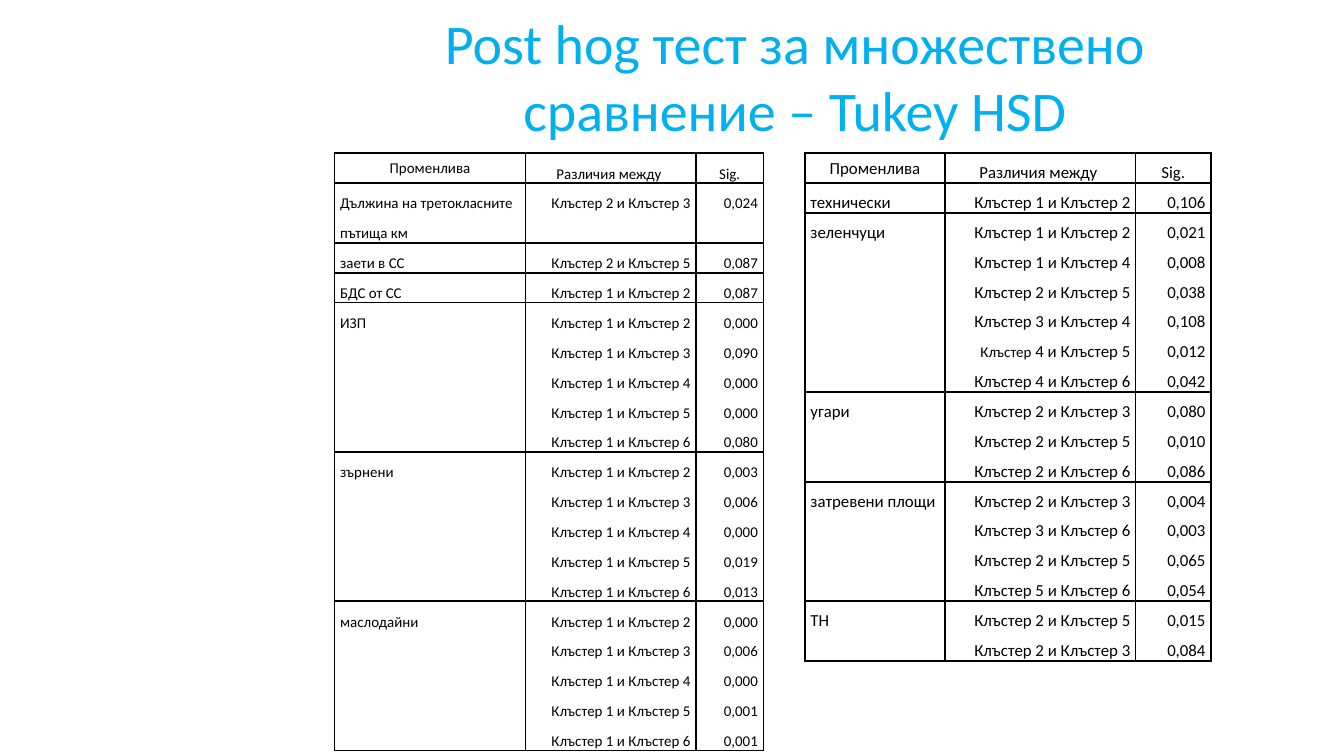
from dataclasses import dataclass

from lxml.etree import SubElement
from pptx import Presentation
from pptx.dml.color import RGBColor
from pptx.enum.text import MSO_ANCHOR, MSO_AUTO_SIZE, PP_ALIGN
from pptx.oxml.ns import qn
from pptx.util import Inches, Pt

FONT = "Calibri"
BLACK = RGBColor(0x00, 0x00, 0x00)
WHITE = RGBColor(0xFF, 0xFF, 0xFF)
TITLE_BLUE = RGBColor(0x00, 0xB0, 0xF0)
SLIDE_WIDTH = Inches(10)
LINE_PITCH = Pt(16)
TABLE_TOP = Inches(1.14)
HEADERS = ("Променлива", "Различия между ", "Sig.")


@dataclass
class Variable:
    name: str
    pairs: str  # compared clusters; a comma starts a new paragraph
    significance: str

    def columns(self) -> list[list[str]]:
        """Paragraphs of text for each of the three cells."""
        comparisons = [
            " ".join("Клъстер {} и Клъстер {}".format(*pair.split("-"))
                     for pair in group.split())
            for group in self.pairs.split(",")
        ]
        return [self.name.split("\n"), comparisons, self.significance.split()]

    def line_count(self) -> int:
        return max(len(self.name.split("\n")), len(self.significance.split()))


@dataclass
class Comparison:
    left: float
    widths: tuple[float, ...]
    font_size: int
    variables: list[Variable]


LEFT_TABLE = Comparison(2.49, (1.42, 1.27, 0.5), 8, [
    Variable("Дължина на третокласните\nпътища км", "2-3", "0,024"),
    Variable("заети в СС", "2-5", "0,087"),
    Variable("БДС от СС", "1-2", "0,087"),
    Variable("ИЗП", "1-2 1-3 1-4 1-5 1-6", "0,000 0,090 0,000 0,000 0,080"),
    Variable("зърнени", "1-2 1-3 1-4 1-5 1-6", "0,003 0,006 0,000 0,019 0,013"),
    Variable("маслодайни", "1-2 1-3 1-4 1-5 1-6", "0,000 0,006 0,000 0,001 0,001"),
])
RIGHT_TABLE = Comparison(5.99, (1.04, 1.42, 0.56), 9, [
    Variable("технически", "1-2", "0,106"),
    Variable("зеленчуци", "1-2 1-4,2-5,3-4,4-5,4-6",
             "0,021 0,008 0,038 0,108 0,012 0,042"),
    Variable("угари", "2-3,2-5 2-6", "0,080 0,010 0,086"),
    Variable("затревени площи", "2-3,3-6,2-5,5-6", "0,004 0,003 0,065 0,054"),
    Variable("ТН", "2-5,2-3", "0,015 0,084"),
])


def add_borders(cell) -> None:
    properties = cell._tc.get_or_add_tcPr()
    for index, side in enumerate(("lnL", "lnR", "lnT", "lnB")):
        line = SubElement(properties, qn(f"a:{side}"), w=str(Pt(1)))
        fill = SubElement(line, qn("a:solidFill"))
        SubElement(fill, qn("a:srgbClr"), val=str(BLACK))
        properties.insert(index, line)  # borders come before the fill


def fill_cell(cell, lines: list[str], size: int, alignment: PP_ALIGN,
              anchor: MSO_ANCHOR = MSO_ANCHOR.TOP, indented: bool = True) -> None:
    cell.margin_left = cell.margin_right = cell.margin_top = cell.margin_bottom = 0
    cell.vertical_anchor = anchor
    cell.fill.solid()
    cell.fill.fore_color.rgb = WHITE
    add_borders(cell)
    cell.text_frame.text = "\n".join(lines)
    for paragraph in cell.text_frame.paragraphs:
        paragraph.alignment = alignment
        paragraph.line_spacing = LINE_PITCH if indented else 1.07
        if indented:
            properties = paragraph._p.get_or_add_pPr()
            for side in ("marL", "marR"):
                properties.set(side, str(Inches(0.04)))
        paragraph.font.name = FONT
        paragraph.font.size = Pt(size)
        paragraph.font.color.rgb = BLACK


def add_comparison(slide, comparison: Comparison):
    variables = comparison.variables
    line_counts = [1] + [variable.line_count() for variable in variables]
    shape = slide.shapes.add_table(
        len(line_counts), len(HEADERS), Inches(comparison.left), TABLE_TOP,
        Inches(sum(comparison.widths)), LINE_PITCH * sum(line_counts))
    table = shape.table
    table.first_row = table.horz_banding = False
    for column, width in zip(table.columns, comparison.widths):
        column.width = Inches(width)
    for row, count in zip(table.rows, line_counts):
        row.height = LINE_PITCH * count

    # Header row
    for index, header in enumerate(HEADERS):
        anchor = MSO_ANCHOR.BOTTOM if index else MSO_ANCHOR.MIDDLE
        fill_cell(table.cell(0, index), [header], comparison.font_size,
                  PP_ALIGN.CENTER, anchor, indented=index > 0)

    # One row per variable
    for row_index, variable in enumerate(variables, start=1):
        for index, lines in enumerate(variable.columns()):
            alignment = PP_ALIGN.RIGHT if index else PP_ALIGN.LEFT
            fill_cell(table.cell(row_index, index), lines,
                      comparison.font_size, alignment)
    return table


def add_title(slide, text: str) -> None:
    title = slide.shapes.title
    title.left, title.top = Inches(2.49), Inches(0.14)
    title.width, title.height = Inches(6.85), Inches(0.84)
    frame = title.text_frame
    frame.text = text
    frame.word_wrap = True
    frame.auto_size = MSO_AUTO_SIZE.NONE
    frame.vertical_anchor = MSO_ANCHOR.MIDDLE
    paragraph = frame.paragraphs[0]
    paragraph.alignment = PP_ALIGN.CENTER
    paragraph.font.name = FONT
    paragraph.font.size = Pt(30)
    paragraph.font.color.rgb = TITLE_BLUE


def main() -> None:
    presentation = Presentation()
    presentation.slide_width = SLIDE_WIDTH
    presentation.slide_height = SLIDE_WIDTH * 9 // 16
    slide = presentation.slides.add_slide(presentation.slide_layouts[5])
    add_title(slide, "Post hog тест за множествено сравнение – Tukey HSD")
    add_comparison(slide, LEFT_TABLE)
    vegetables = add_comparison(slide, RIGHT_TABLE).cell(2, 1)

    # The first word of the comparison of clusters 4 and 5 is smaller
    paragraph = vegetables.text_frame.paragraphs[3]
    first_run = paragraph.runs[0]
    word, rest = first_run.text.split(" ", 1)
    first_run.text = word
    first_run.font.size = Pt(8)
    paragraph.add_run().text = f" {rest}"

    presentation.save("out.pptx")


if __name__ == "__main__":
    main()
